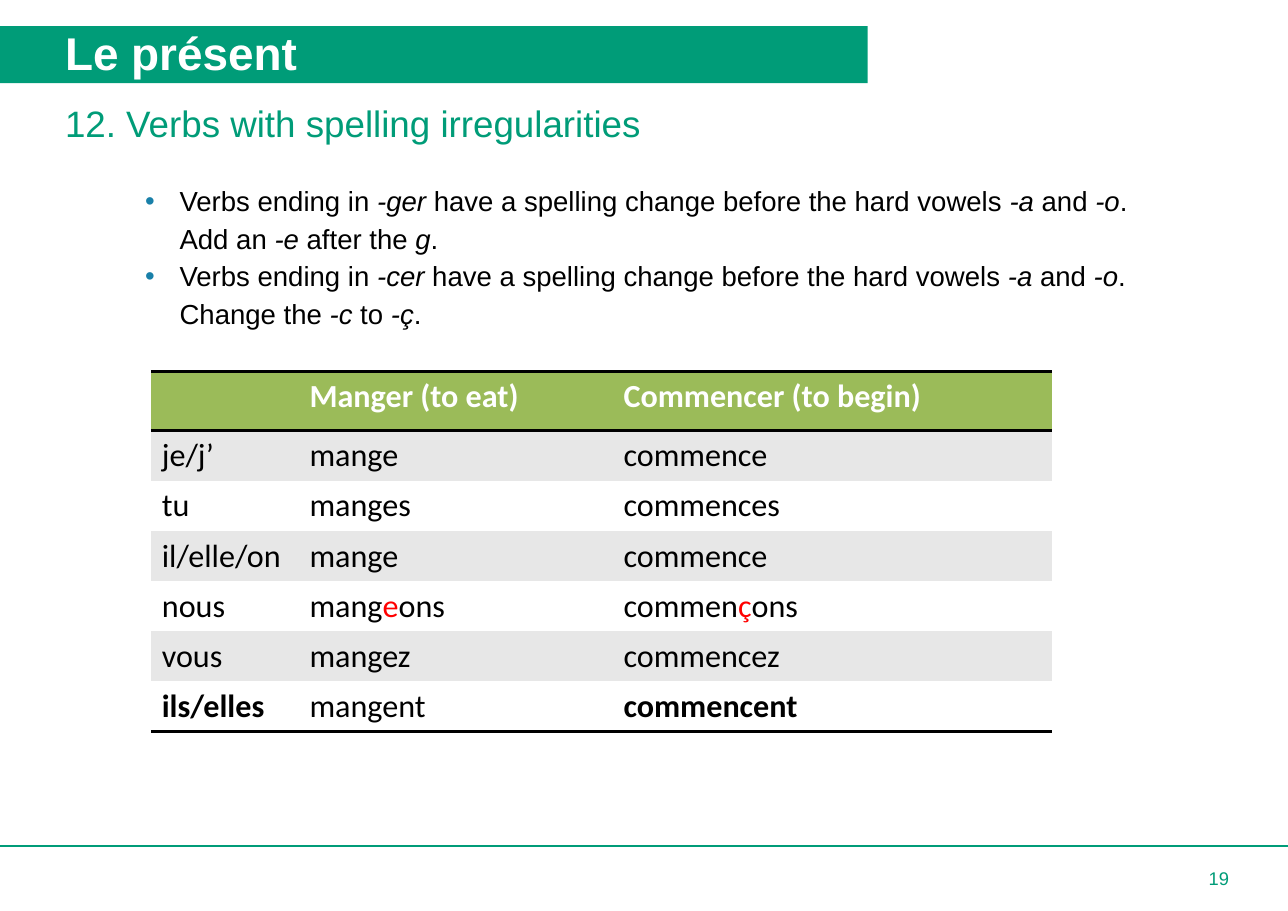
from lxml.etree import SubElement
from pptx import Presentation
from pptx.dml.color import RGBColor
from pptx.enum.shapes import MSO_CONNECTOR
from pptx.enum.text import MSO_ANCHOR, MSO_AUTO_SIZE, PP_ALIGN
from pptx.oxml import parse_xml
from pptx.oxml.ns import nsdecls, qn
from pptx.util import Pt

GREEN = RGBColor(0x00, 0x9C, 0x78)
BULLET_BLUE = RGBColor(0x19, 0x80, 0xA9)
HEADER_GREEN = RGBColor(0x9B, 0xBB, 0x59)
BAND_GREY = RGBColor(0xE7, 0xE7, 0xE7)
WHITE = RGBColor(0xFF, 0xFF, 0xFF)
BLACK = RGBColor(0x00, 0x00, 0x00)
RED = RGBColor(0xFF, 0x00, 0x00)

WIDTH, HEIGHT = 841.68, 595.44
TEXT_INDENT = 42.5
FOOTER_TOP = 553
NO_TABLE_STYLE = "{2D5ABB26-0587-4C30-8999-92F81FD0307C}"

# Asterisks enclose the emphasised parts of a text
RULES = [
    "Verbs ending in *-ger *have a spelling change before the hard vowels "
    "*-a *and *-o*. Add an *-e *after the *g*.",
    "Verbs ending in *-cer *have a spelling change before the hard vowels "
    "*-a *and *-o*. Change the *-c *to *-ç*.",
]
CONJUGATION = [
    ("", "Manger (to eat)", "Commencer (to begin)"),
    ("je/j’", "mange", "commence"),
    ("tu", "manges", "commences"),
    ("il/elle/on", "mange", "commence"),
    ("nous", "mang*e*ons", "commen*ç*ons"),
    ("vous", "mangez", "commencez"),
    ("ils/elles", "mangent", "commencent"),
]
BOLD_CELLS = {(0, 1), (0, 2), (6, 0), (6, 2)}


def set_values(target, values):
    for name, value in values.items():
        setattr(target, name, value)


def write_text(paragraph, text, size, color, name="Arial", bold=False, marked_color=None):
    """Emphasis is the marked colour if one is given, otherwise italic."""
    for index, part in enumerate(text.split("*")):
        if not part:
            continue
        marked = index % 2 == 1
        run = paragraph.add_run()
        run.text = part
        set_values(run.font, {"name": name, "size": Pt(size), "bold": bold,
                              "italic": marked and marked_color is None})
        run.font.color.rgb = marked_color if marked and marked_color else color


def place(shape, box):
    set_values(shape, dict(zip(("left", "top", "width", "height"), map(Pt, box))))


def format_heading(text_frame, text, size, color, bold=False):
    set_values(text_frame, {
        "margin_left": Pt(TEXT_INDENT), "margin_right": 0, "margin_top": 0,
        "margin_bottom": Pt(3.6), "word_wrap": True,
        "auto_size": MSO_AUTO_SIZE.NONE, "vertical_anchor": MSO_ANCHOR.MIDDLE})
    paragraph = text_frame.paragraphs[0]
    paragraph.alignment = PP_ALIGN.LEFT
    write_text(paragraph, text, size, color, bold=bold)


def add_title(slide, box):
    title = slide.shapes.title
    place(title, box)
    title.fill.solid()
    title.fill.fore_color.rgb = GREEN
    format_heading(title.text_frame, "Le présent", 30, WHITE, bold=True)


def add_subtitle(slide, box):
    subtitle = slide.shapes.add_textbox(*map(Pt, box))
    format_heading(subtitle.text_frame, "12. Verbs with spelling irregularities", 24, GREEN)


def add_rules(slide, box):
    text_frame = slide.shapes.add_textbox(*map(Pt, box)).text_frame
    text_frame.word_wrap = True
    for index, rule in enumerate(RULES):
        paragraph = text_frame.add_paragraph() if index else text_frame.paragraphs[0]
        properties = paragraph._p.get_or_add_pPr()
        properties.set("marL", str(Pt(22.5)))
        properties.set("indent", str(Pt(-22.5)))
        paragraph.line_spacing = Pt(24.6)
        bullet_color = SubElement(properties, qn("a:buClr"))
        SubElement(bullet_color, qn("a:srgbClr"), val=str(BULLET_BLUE))
        SubElement(properties, qn("a:buFont"), typeface="Arial")
        SubElement(properties, qn("a:buChar"), char="•")
        write_text(paragraph, rule, 18, BLACK)


def add_border(cell, side):
    cell._tc.get_or_add_tcPr().append(parse_xml(
        f'<a:{side} {nsdecls("a")} w="{Pt(2)}"><a:solidFill>'
        f'<a:srgbClr val="{BLACK}"/></a:solidFill></a:{side}>'))


def add_conjugation_table(slide, box):
    last_row = len(CONJUGATION) - 1
    frame = slide.shapes.add_table(len(CONJUGATION), 3, *map(Pt, box))
    table = frame.table
    set_values(table, {"first_row": False, "horz_banding": False})
    table._tbl.tblPr.find(qn("a:tableStyleId")).text = NO_TABLE_STYLE
    for column, width in zip(table.columns, (96.5, 205.2, 287.3)):
        column.width = Pt(width)

    header_height = 38.4
    body_height = (box[3] - header_height) / last_row
    for row, words in enumerate(CONJUGATION):
        header = row == 0
        table.rows[row].height = Pt(header_height if header else body_height)
        fill = HEADER_GREEN if header else BAND_GREY if row % 2 else WHITE
        for column, word in enumerate(words):
            cell = table.cell(row, column)
            if header:
                add_border(cell, "lnT")
            if row in (0, last_row):
                add_border(cell, "lnB")
            cell.fill.solid()
            cell.fill.fore_color.rgb = fill
            write_text(cell.text_frame.paragraphs[0], word, 21,
                       WHITE if header else BLACK, "Calibri",
                       (row, column) in BOLD_CELLS, RED)


def add_footer(slide, box):
    left, top, width, height = box
    # Rule across the page
    line = slide.shapes.add_connector(
        MSO_CONNECTOR.STRAIGHT, Pt(left), Pt(top), Pt(left + width), Pt(top))
    line.line.color.rgb = GREEN
    line.line.width = Pt(0.75)
    SubElement(line._element.spPr, qn("a:effectLst"))
    # Page number
    number_width = 101.5
    number = slide.shapes.add_textbox(
        Pt(left + width - number_width), Pt(top), Pt(number_width), Pt(height))
    set_values(number.text_frame, {
        "word_wrap": True, "margin_left": Pt(TEXT_INDENT + 7.2),
        "vertical_anchor": MSO_ANCHOR.MIDDLE})
    write_text(number.text_frame.paragraphs[0], "19", 12, GREEN)


def main():
    presentation = Presentation()
    presentation.slide_width, presentation.slide_height = Pt(WIDTH), Pt(HEIGHT)
    slide = presentation.slides.add_slide(presentation.slide_layouts[5])
    add_footer(slide, (0, FOOTER_TOP, WIDTH, HEIGHT - FOOTER_TOP))
    add_title(slide, (0, 17, 567, 37.4))
    add_subtitle(slide, (0, 64, WIDTH, 36.7))
    add_rules(slide, (87.8, 113.8, 666.7, 404.6))
    add_conjugation_table(slide, (98.6, 243, 589, 235.2))
    presentation.save("out.pptx")


if __name__ == "__main__":
    main()
